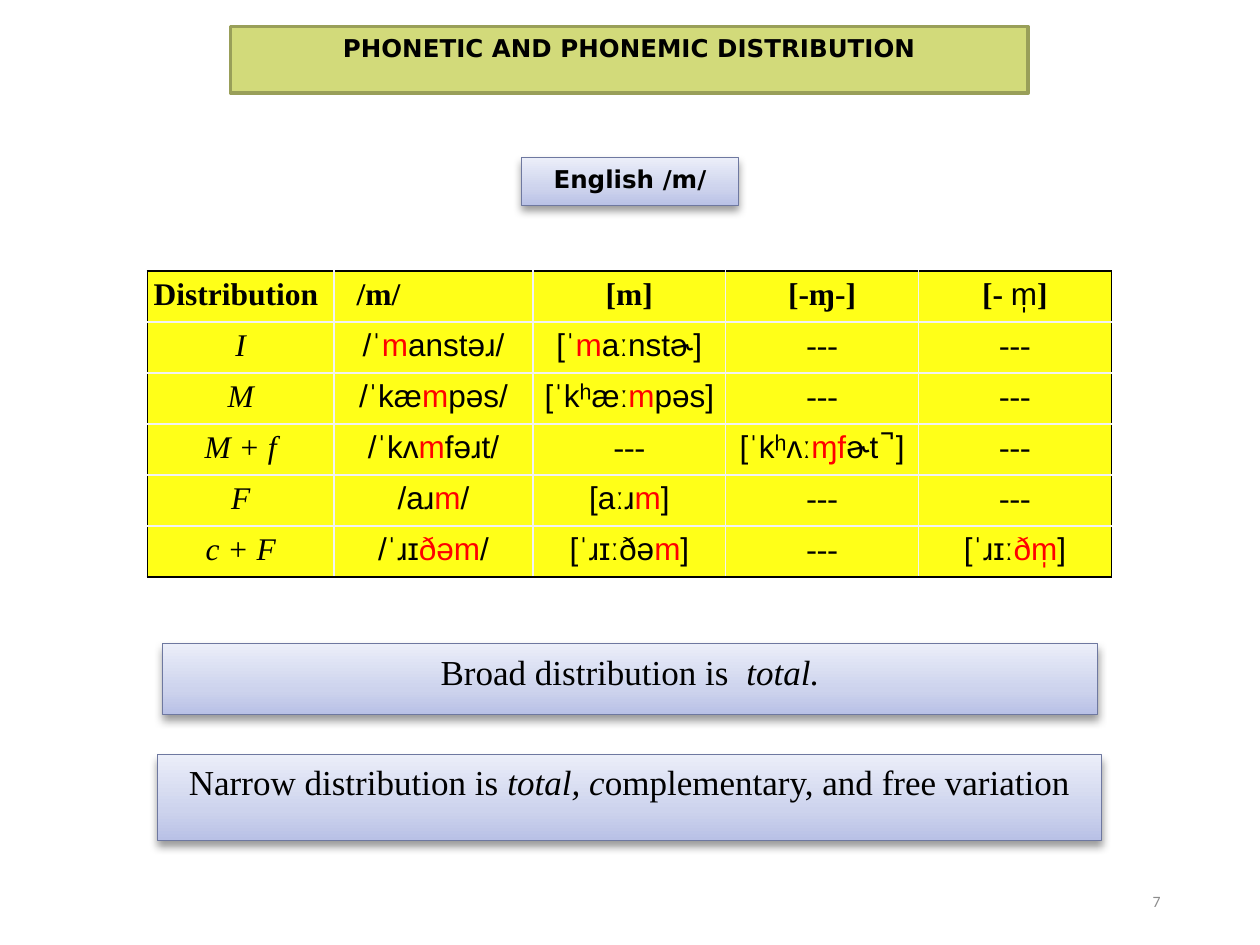
import pptx
import pptx.dml.color
import pptx.enum.shapes
import pptx.enum.text
import pptx.oxml
import pptx.oxml.ns
import pptx.util

Inches = pptx.util.Inches
Pt = pptx.util.Pt
ALIGN = pptx.enum.text.PP_ALIGN
ANCHOR = pptx.enum.text.MSO_ANCHOR
NAMESPACE = pptx.oxml.ns.nsdecls("a")
SERIF = "Times New Roman"
SANS = "DejaVu Sans"
PHONETIC = "Arial"
BLACK, RED, YELLOW, GRID = "000000", "FF0000", "FFFF18", "F2F2F2"
GRADIENT = [(0, "B9C1E6"), (35, "CDD3ED"), (100, "EBEEF9")]
COLUMN_WIDTHS = [1.48, 1.58, 1.53, 1.53, 1.53]
HEADERS = ["Distribution", "/m/", "[m]", "[-ɱ-]", "[- |m̩|]"]
ROWS = [
    ["I", "/ˈ|m|anstəɹ/", "[ˈ|m|aːnstɚ]", "---", "---"],
    ["M", "/ˈkæ|m|pəs/", "[ˈkʰæː|m|pəs]", "---", "---"],
    ["M + f", "/ˈkʌ|m|fəɹt/", "---", "[ˈkʰʌː|ɱf|ɚt ̚ ]", "---"],
    ["F", "/aɹ|m|/", "[aːɹ|m|]", "---", "---"],
    ["c + F", "/ˈɹɪ|ðəm|/", "[ˈɹɪːðə|m|]", "---", "[ˈɹɪː|ðm̩|]"],
]


def color(value):
    return pptx.dml.color.RGBColor.from_string(value)


def add_run(paragraph, text, size, name, shade=BLACK, bold=False, italic=False):
    run = paragraph.add_run()
    run.text = text
    run.font.size = Pt(size)
    run.font.name = name
    run.font.bold = bold
    run.font.italic = italic
    run.font.color.rgb = color(shade)


def prepare_frame(frame, alignment=ALIGN.CENTER):
    frame.word_wrap = True
    frame.auto_size = pptx.enum.text.MSO_AUTO_SIZE.NONE
    frame.vertical_anchor = ANCHOR.TOP
    frame.margin_left = frame.margin_right = Inches(0.05)
    frame.margin_top = frame.margin_bottom = Inches(0.05)
    paragraph = frame.paragraphs[0]
    paragraph.alignment = alignment
    return paragraph


def place_title(slide, left, top, width, height):
    title = slide.shapes.title
    title.left, title.top = Inches(left), Inches(top)
    title.width, title.height = Inches(width), Inches(height)
    title.fill.solid()
    title.fill.fore_color.rgb = color("D2DA7A")
    title.line.color.rgb = color("999F59")
    title.line.width = Pt(2)
    paragraph = prepare_frame(title.text_frame)
    add_run(paragraph, "PHONETIC AND PHONEMIC DISTRIBUTION", 14, SANS, bold=True)


def add_panel(slide, left, top, width, height):
    panel = slide.shapes.add_shape(
        pptx.enum.shapes.MSO_SHAPE.RECTANGLE,
        Inches(left), Inches(top), Inches(width), Inches(height))
    panel.line.color.rgb = color("6E78A0")
    panel.line.width = Pt(0.75)
    panel.fill.background()
    stops = "".join(
        f'<a:gs pos="{position * 1000}"><a:srgbClr val="{shade}"/></a:gs>'
        for position, shade in GRADIENT)
    gradient = pptx.oxml.parse_xml(
        f'<a:gradFill {NAMESPACE} rotWithShape="1"><a:gsLst>{stops}</a:gsLst>'
        '<a:lin ang="16200000" scaled="0"/></a:gradFill>')
    properties = panel._element.spPr
    properties.replace(properties.find(pptx.oxml.ns.qn("a:noFill")), gradient)
    panel.shadow.inherit = False
    effects = properties.find(pptx.oxml.ns.qn("a:effectLst"))
    effects.append(pptx.oxml.parse_xml(
        f'<a:outerShdw {NAMESPACE} blurRad="{Pt(5)}" dist="{Pt(3)}" dir="5400000" '
        'rotWithShape="0"><a:srgbClr val="000000"><a:alpha val="40000"/>'
        '</a:srgbClr></a:outerShdw>'))
    return prepare_frame(panel.text_frame)


def place_language_label(slide, left, top, width, height):
    paragraph = add_panel(slide, left, top, width, height)
    add_run(paragraph, "English /m/", 14, SANS, bold=True)


def place_conclusion(slide, left, top, width, height, pieces):
    paragraph = add_panel(slide, left, top, width, height)
    for index, text in enumerate(pieces):
        add_run(paragraph, text, 20, SERIF, italic=index % 2 == 1)


def set_borders(cell, sides):
    properties = cell._tc.get_or_add_tcPr()
    for index, (side, shade) in enumerate(sides.items()):
        properties.insert(index, pptx.oxml.parse_xml(
            f'<a:ln{side} {NAMESPACE} w="{Pt(1)}"><a:solidFill>'
            f'<a:srgbClr val="{shade}"/></a:solidFill></a:ln{side}>'))


def fill_cell(cell, text, row, column):
    left_aligned = row == 0 and column < 2
    paragraph = prepare_frame(
        cell.text_frame, ALIGN.LEFT if left_aligned else ALIGN.CENTER)
    cell.margin_left = Inches(0.18 if row == 0 and column == 1 else 0.05)
    cell.margin_right = cell.margin_top = cell.margin_bottom = Inches(0.05)
    cell.vertical_anchor = ANCHOR.TOP
    if row == 0:
        base = {"name": SERIF, "bold": True}
        accent = {"name": PHONETIC}
    elif column == 0 or text == "---":
        base = accent = {"name": SERIF, "italic": True}
    else:
        base = {"name": PHONETIC}
        accent = {"name": PHONETIC, "shade": RED}
    for index, piece in enumerate(text.split("|")):
        add_run(paragraph, piece, 18, **(accent if index % 2 else base))


def place_distribution_table(slide, left, top, height):
    contents = [HEADERS] + ROWS
    last_row, last_column = len(contents) - 1, len(HEADERS) - 1
    table = slide.shapes.add_table(
        len(contents), len(HEADERS), Inches(left), Inches(top),
        Inches(sum(COLUMN_WIDTHS)), Inches(height)).table
    table.first_row = table.horz_banding = False
    for column, width in zip(table.columns, COLUMN_WIDTHS):
        column.width = Inches(width)
    for row, texts in enumerate(contents):
        table.rows[row].height = Inches(height / len(contents))
        for column, text in enumerate(texts):
            cell = table.cell(row, column)
            fill_cell(cell, text, row, column)
            cell.fill.solid()
            cell.fill.fore_color.rgb = color(YELLOW)
            set_borders(cell, {
                "L": BLACK if column == 0 else GRID,
                "R": BLACK if column == last_column else GRID,
                "T": BLACK if row == 0 else GRID,
                "B": BLACK if row == last_row else GRID,
            })


def place_page_number(slide, left, top, width, height):
    box = slide.shapes.add_textbox(
        Inches(left), Inches(top), Inches(width), Inches(height))
    box.text_frame.word_wrap = True
    box.text_frame.vertical_anchor = ANCHOR.MIDDLE
    paragraph = box.text_frame.paragraphs[0]
    paragraph.alignment = ALIGN.RIGHT
    add_run(paragraph, "7", 9, "Calibri", "8C8C8C")


def main():
    presentation = pptx.Presentation()
    presentation.slide_width = Inches(10)
    presentation.slide_height = Inches(7.5)
    slide = presentation.slides.add_slide(presentation.slide_layouts[5])
    place_title(slide, 1.83, 0.21, 6.33, 0.53)
    place_language_label(slide, 4.14, 1.25, 1.72, 0.38)
    place_distribution_table(slide, 1.17, 2.15, 2.43)
    place_conclusion(slide, 1.29, 5.11, 7.42, 0.56,
                     ["Broad distribution is  ", "total."])
    place_conclusion(slide, 1.25, 5.99, 7.49, 0.68,
                     ["Narrow distribution is ", "total, c",
                      "omplementary, and free variation"])
    place_page_number(slide, 7.06, 6.95, 2.25, 0.4)
    presentation.save("out.pptx")


if __name__ == "__main__":
    main()
